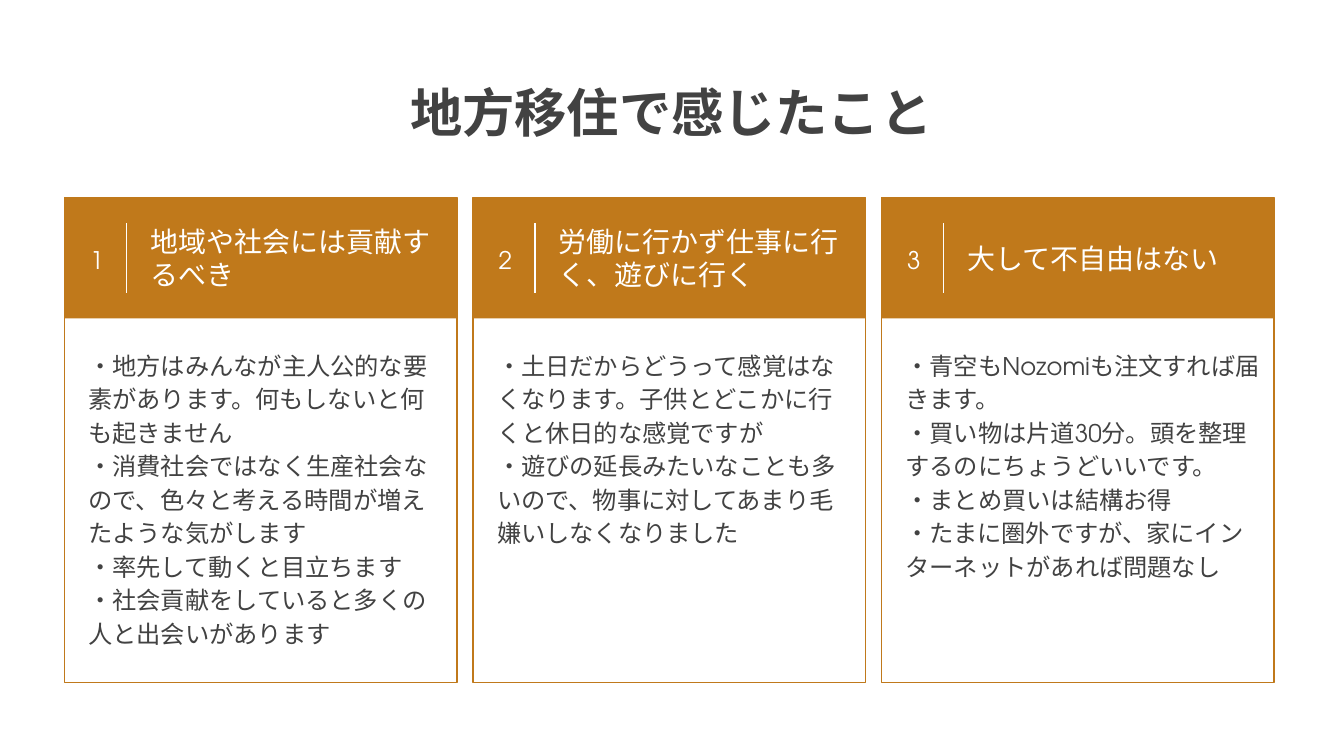
"""Build a slide with three numbered cards on moving to the countryside."""
import pptx
import pptx.dml.color
import pptx.enum.shapes
import pptx.enum.text
import pptx.oxml.ns
import pptx.util
from lxml import etree

Inches = pptx.util.Inches
Align = pptx.enum.text.PP_ALIGN
Anchor = pptx.enum.text.MSO_ANCHOR

TITLE = "地方移住で感じたこと"
CARDS = [
    ("地域や社会には貢献するべき", [[
        "・地方はみんなが主人公的な要素があります。何もしないと何も起きません",
        "・消費社会ではなく生産社会なので、色々と考える時間が増えたような気がします",
        "・率先して動くと目立ちます",
        "・社会貢献をしていると多くの人と出会いがあります",
    ]]),
    ("労働に行かず仕事に行く、遊びに行く", [
        ["・土日だからどうって感覚はなくなります。子供とどこかに行くと休日的な感覚ですが"],
        ["・遊びの延長みたいなことも多いので、物事に対してあまり毛嫌いしなくなりました"],
    ]),
    ("大して不自由はない", [[
        "・青空もNozomiも注文すれば届きます。",
        "・買い物は片道30分。頭を整理するのにちょうどいいです。",
        "・まとめ買いは結構お得",
        "・たまに圏外ですが、家にインターネットがあれば問題なし",
    ]]),
]
COLORS = {"accent": "C0791B", "text": "424242", "white": "FFFFFF"}
TITLE_FONT, BODY_FONT = "Lato", "TeX Gyre Adventor"
CARD_LEFT, CARD_TOP, CARD_STEP = 0.48, 1.47, 3.04
CARD_WIDTH, CARD_HEIGHT, HEADER_HEIGHT = 2.92, 3.61, 0.9


def color(name):
    return pptx.dml.color.RGBColor.from_string(COLORS[name])


def add_text(slide, box, paragraphs, size, color_name, font=BODY_FONT, bold=False,
             align=Align.LEFT, anchor=Anchor.TOP, spacing=1.0, margin_right=0.1):
    frame = slide.shapes.add_textbox(*map(Inches, box)).text_frame
    frame.word_wrap = True
    frame.vertical_anchor = anchor
    frame.margin_left = frame.margin_top = frame.margin_bottom = Inches(0.1)
    frame.margin_right = Inches(margin_right)
    for index, lines in enumerate(paragraphs):
        paragraph = frame.add_paragraph() if index else frame.paragraphs[0]
        paragraph.alignment = align
        paragraph.line_spacing = spacing
        for line_index, line in enumerate(lines):
            if line_index:
                paragraph.add_line_break()
            run = paragraph.add_run()
            run.text = line
            run.font.name = font
            run.font.size = pptx.util.Pt(size)
            run.font.bold = bold
            run.font.color.rgb = color(color_name)
            properties = run.font._element
            etree.SubElement(properties, pptx.oxml.ns.qn("a:ea"), typeface=font)


def add_rectangle(slide, left, height, filled):
    shape = slide.shapes.add_shape(
        pptx.enum.shapes.MSO_SHAPE.RECTANGLE,
        Inches(left), Inches(CARD_TOP), Inches(CARD_WIDTH), Inches(height))
    shape.shadow.inherit = False
    if filled:
        shape.fill.solid()
        shape.fill.fore_color.rgb = color("accent")
        shape.line.fill.background()
    else:
        shape.fill.background()
        shape.line.color.rgb = color("accent")
        shape.line.width = pptx.util.Pt(0.75)


def add_divider(slide, x):
    line = slide.shapes.add_connector(
        pptx.enum.shapes.MSO_CONNECTOR.STRAIGHT,
        Inches(x), Inches(1.66), Inches(x), Inches(2.18))
    line.line.color.rgb = color("white")
    line.line.width = pptx.util.Pt(0.75)
    etree.SubElement(line._element.spPr, pptx.oxml.ns.qn("a:effectLst"))


def add_card(slide, number, heading, points):
    left = CARD_LEFT + (number - 1) * CARD_STEP
    add_rectangle(slide, left, CARD_HEIGHT, False)
    add_rectangle(slide, left, HEADER_HEIGHT, True)
    add_text(slide, (left + 0.05, CARD_TOP, 0.38, HEADER_HEIGHT), [[str(number)]], 13, "white",
             align=Align.CENTER, anchor=Anchor.MIDDLE, spacing=1.15)
    add_divider(slide, left + 0.46)
    add_text(slide, (left + 0.54, CARD_TOP, 2.3, HEADER_HEIGHT), [[heading]], 15, "white",
             anchor=Anchor.MIDDLE)
    add_text(slide, (left + 0.08, 2.48, 2.77, 2.6), points, 13, "text",
             spacing=1.15, margin_right=0)


def main():
    presentation = pptx.Presentation()
    presentation.slide_width = Inches(10)
    presentation.slide_height = presentation.slide_width * 9 // 16
    slide = presentation.slides.add_slide(presentation.slide_layouts[6])
    add_text(slide, (0.42, 0.5, 9.15, 0.75), [[TITLE]], 28, "text",
             font=TITLE_FONT, bold=True, align=Align.CENTER)
    for number, (heading, points) in enumerate(CARDS, 1):
        add_card(slide, number, heading, points)
    presentation.save("out.pptx")


if __name__ == "__main__":
    main()
